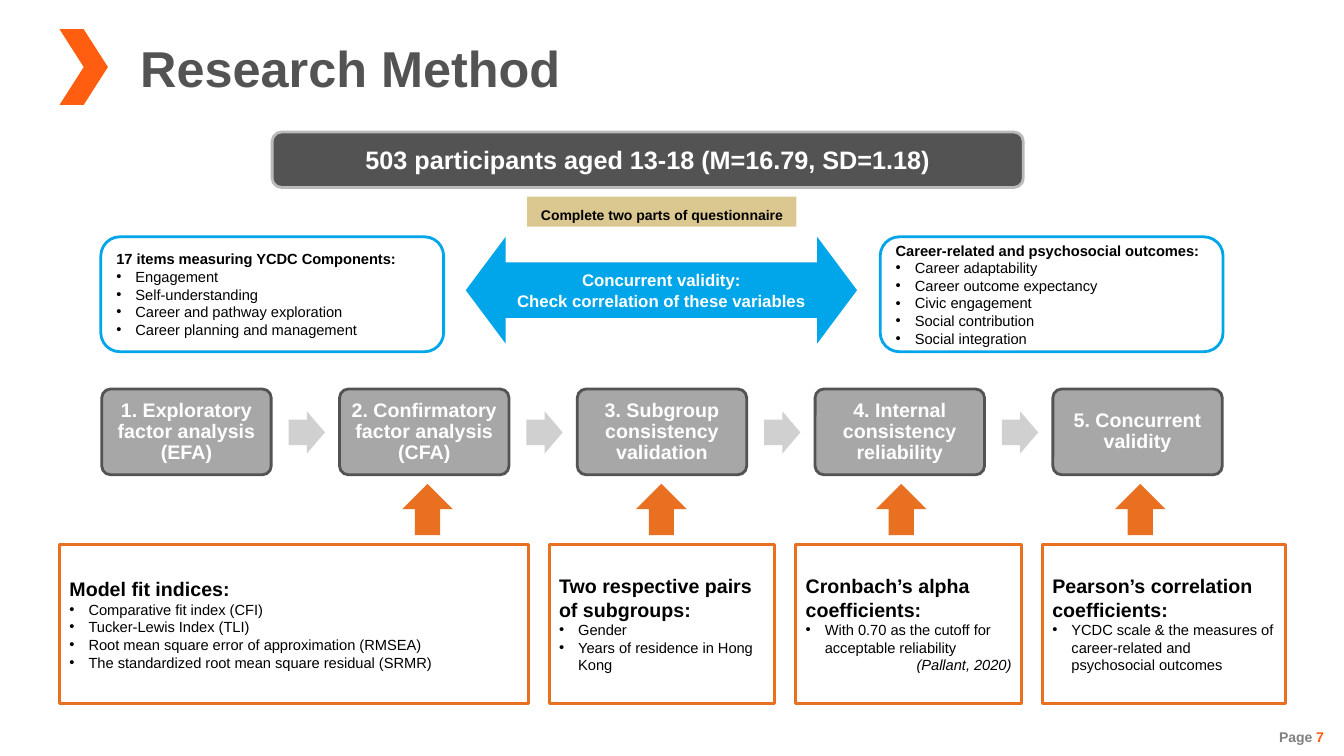
from dataclasses import dataclass

from lxml.etree import SubElement
from pptx import Presentation
from pptx.dml.color import RGBColor
from pptx.enum.shapes import MSO_SHAPE
from pptx.enum.text import MSO_ANCHOR, PP_ALIGN
from pptx.oxml.ns import qn
from pptx.util import Inches, Pt


@dataclass(frozen=True)
class Theme:
    font: str = "Arial"
    dark: str = "535353"
    orange: str = "FF5E10"
    rust: str = "EA7021"
    blue: str = "00A6E9"
    sand: str = "DBC890"
    step: str = "A7A7A7"
    pale: str = "D0D0D0"
    rim: str = "BABABA"
    muted: str = "808080"
    black: str = "000000"
    white: str = "FFFFFF"
    title: float = 36
    banner: float = 18
    heading: float = 14
    arrow: float = 12
    body: float = 10.5
    small: float = 10


THEME = Theme()
WIDTH, HEIGHT = Inches(13.33), Inches(7.5)
INDENT = Inches(0.19)


# Positions and sizes are percentages of the slide's width and height
def area(left, top, width, height):
    return (int(WIDTH * left / 100), int(HEIGHT * top / 100),
            int(WIDTH * width / 100), int(HEIGHT * height / 100))


def add_span(para, text, size, color=THEME.black, bold=True, italic=False):
    span = para.add_run()
    span.text = text
    span.font.name = THEME.font
    span.font.size = Pt(size)
    span.font.bold = bold
    span.font.italic = italic
    span.font.color.rgb = RGBColor.from_string(color)


def add_para(box, align=PP_ALIGN.LEFT):
    frame = box.text_frame
    first = frame.paragraphs[0]
    para = frame.add_paragraph() if first.runs else first
    para.alignment = align
    return para


def add_bullet(box, text):
    para = add_para(box)
    properties = para._p.get_or_add_pPr()
    properties.set("marL", str(INDENT))
    properties.set("indent", str(-INDENT))
    SubElement(properties, qn("a:buFont")).set("typeface", THEME.font)
    SubElement(properties, qn("a:buChar")).set("char", "•")
    add_span(para, text, THEME.body, bold=False)


def add_list(box, heading, size, items):
    add_span(add_para(box), heading, size)
    for item in items:
        add_bullet(box, item)


def set_frame(box, inset_x=0.1, inset_y=0.05, anchor=MSO_ANCHOR.MIDDLE, wrap=True):
    frame = box.text_frame
    frame.word_wrap = wrap
    frame.vertical_anchor = anchor
    frame.margin_left = frame.margin_right = Inches(inset_x)
    frame.margin_top = frame.margin_bottom = Inches(inset_y)


def add_box(page, kind, place, fill=None, line=None, adjust=()):
    box = page.shapes.add_shape(kind, *area(*place))
    box.shadow.inherit = False
    for index, value in enumerate(adjust):
        box.adjustments[index] = value
    if fill:
        box.fill.solid()
        box.fill.fore_color.rgb = RGBColor.from_string(fill)
    else:
        box.fill.background()
    if line:
        box.line.color.rgb = RGBColor.from_string(line)
        box.line.width = Pt(2)
    else:
        box.line.fill.background()
    set_frame(box)
    return box


def add_header(page):
    title = page.shapes.title
    title.left, title.top, title.width, title.height = area(9.68, 4.13, 34.13, 9.47)
    set_frame(title, wrap=False)
    add_span(add_para(title), "Research Method", THEME.title, THEME.dark)
    add_box(page, MSO_SHAPE.CHEVRON, (4.43, 3.87, 3.6, 10), THEME.orange)


def add_page_number(page):
    box = page.shapes.add_textbox(*area(94.37, 95.73, 4.88, 3.6))
    set_frame(box, wrap=False)
    para = add_para(box, PP_ALIGN.RIGHT)
    add_span(para, "Page ", THEME.small, THEME.muted)
    add_span(para, "7", THEME.small, THEME.orange)


def add_sample(page):
    banner = add_box(page, MSO_SHAPE.ROUNDED_RECTANGLE, (20.25, 17.47, 55.89, 7.33),
                     THEME.dark, THEME.rim)
    add_span(add_para(banner, PP_ALIGN.CENTER),
             "503 participants aged 13-18 (M=16.79, SD=1.18)", THEME.banner, THEME.white)
    label = add_box(page, MSO_SHAPE.RECTANGLE, (39.23, 26, 20.03, 4), THEME.sand)
    set_frame(label, 0.1, 0.1, MSO_ANCHOR.TOP)
    add_span(add_para(label, PP_ALIGN.CENTER),
             "Complete two parts of questionnaire", THEME.small)


def add_questionnaire(page):
    top = 31.33
    arrow = add_box(page, MSO_SHAPE.LEFT_RIGHT_ARROW, (34.66, top, 29.11, 14.13),
                    THEME.blue, adjust=(0.519, 0.373))
    set_frame(arrow, 0.1, 0.1)
    for text in ("Concurrent validity:", "Check correlation of these variables"):
        add_span(add_para(arrow, PP_ALIGN.CENTER), text, THEME.arrow, THEME.white)

    panels = (
        (7.5, "17 items measuring YCDC Components:",
         ("Engagement", "Self-understanding", "Career and pathway exploration",
          "Career planning and management")),
        (65.49, "Career-related and psychosocial outcomes:",
         ("Career adaptability", "Career outcome expectancy", "Civic engagement",
          "Social contribution", "Social integration")),
    )
    for left, heading, items in panels:
        panel = add_box(page, MSO_SHAPE.ROUNDED_RECTANGLE, (left, top, 25.51, 15.2),
                        line=THEME.blue)
        add_list(panel, heading, THEME.body, items)


def add_steps(page):
    steps = ("1. Exploratory factor analysis (EFA)", "2. Confirmatory factor analysis (CFA)",
             "3. Subgroup consistency validation", "4. Internal consistency reliability",
             "5. Concurrent validity")
    for index, text in enumerate(steps):
        left = 7.58 + 17.69 * index
        step = add_box(page, MSO_SHAPE.ROUNDED_RECTANGLE, (left, 51.47, 12.6, 11.33),
                       THEME.step, THEME.dark, (0.1,))
        set_frame(step, 0.06, 0.06)
        para = add_para(step, PP_ALIGN.CENTER)
        para.line_spacing = 0.9
        add_span(para, text, THEME.heading, THEME.white)
        if index < len(steps) - 1:
            add_box(page, MSO_SHAPE.RIGHT_ARROW, (left + 13.9, 54.4, 2.7, 5.6),
                    THEME.pale, adjust=(0.6, 0.5))


def add_criteria(page):
    # Each entry: box width, left edge of its arrow, heading, bullets, citation
    criteria = (
        (34.88, 29.93, "Model fit indices:",
         ("Comparative fit index (CFI)", "Tucker-Lewis Index (TLI)",
          "Root mean square error of approximation (RMSEA)",
          "The standardized root mean square residual (SRMR)"), None),
        (16.8, 47.34, "Two respective pairs of subgroups:",
         ("Gender", "Years of residence in Hong Kong"), None),
        (16.8, 65.19, "Cronbach’s alpha coefficients:",
         ("With 0.70 as the cutoff for acceptable reliability",), "(Pallant, 2020)"),
        (18.08, 82.97, "Pearson’s correlation coefficients:",
         ("YCDC scale & the measures of career-related and psychosocial outcomes",), None),
    )
    left, gap = 4.43, 1.55
    for width, arrow_left, heading, items, citation in criteria:
        box = add_box(page, MSO_SHAPE.RECTANGLE, (left, 72, width, 21.07),
                      THEME.white, THEME.rust)
        set_frame(box, 0.1, 0.1)
        add_list(box, heading, THEME.heading, items)
        if citation:
            add_span(add_para(box, PP_ALIGN.RIGHT), citation, THEME.body,
                     bold=False, italic=True)
        add_box(page, MSO_SHAPE.UP_ARROW, (arrow_left, 64, 3.75, 6.8), THEME.rust)
        left += width + gap


def main():
    deck = Presentation()
    deck.slide_width, deck.slide_height = WIDTH, HEIGHT
    page = deck.slides.add_slide(deck.slide_layouts.get_by_name("Title Only"))
    add_header(page)
    add_page_number(page)
    add_sample(page)
    add_questionnaire(page)
    add_steps(page)
    add_criteria(page)
    deck.save("out.pptx")


if __name__ == "__main__":
    main()
